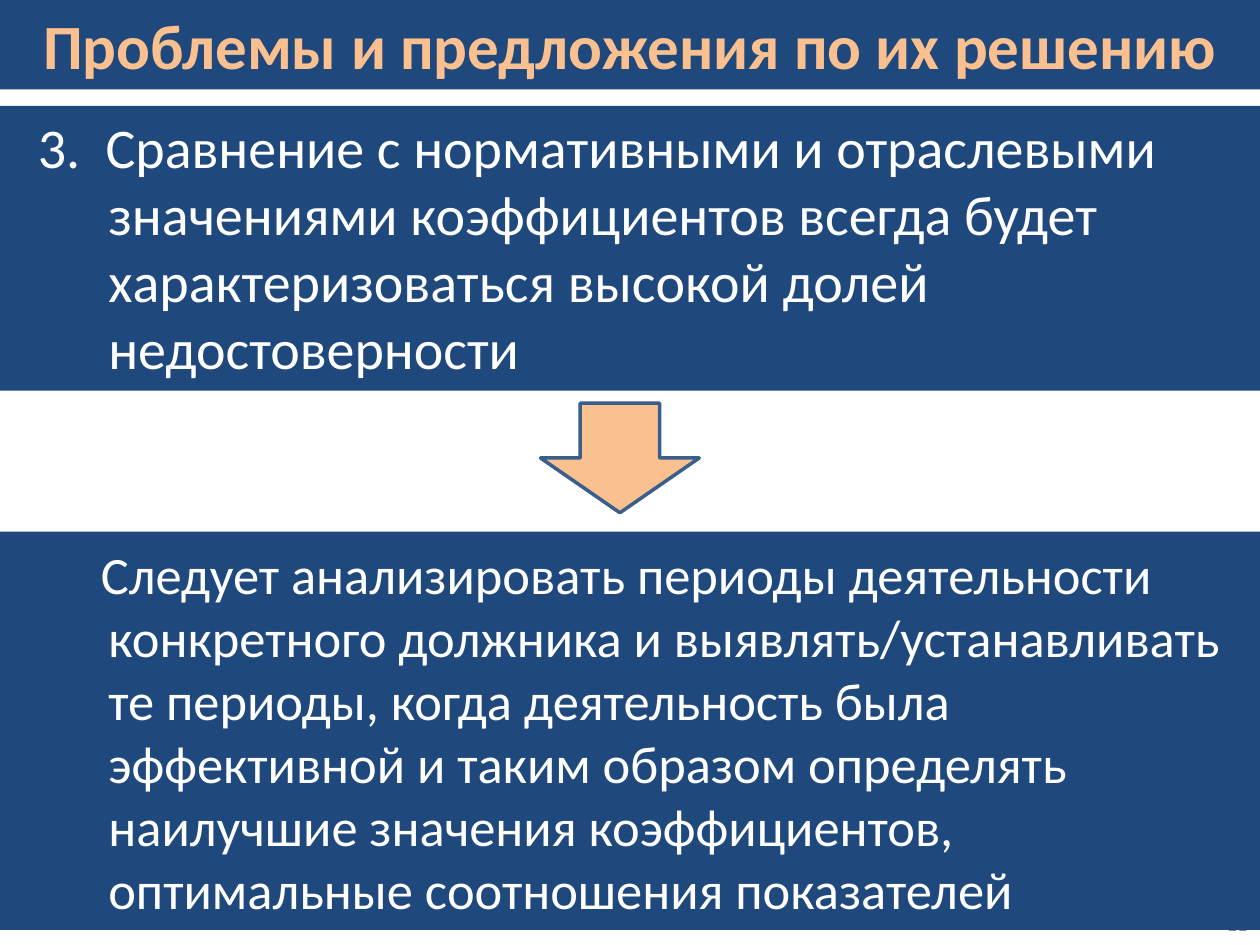
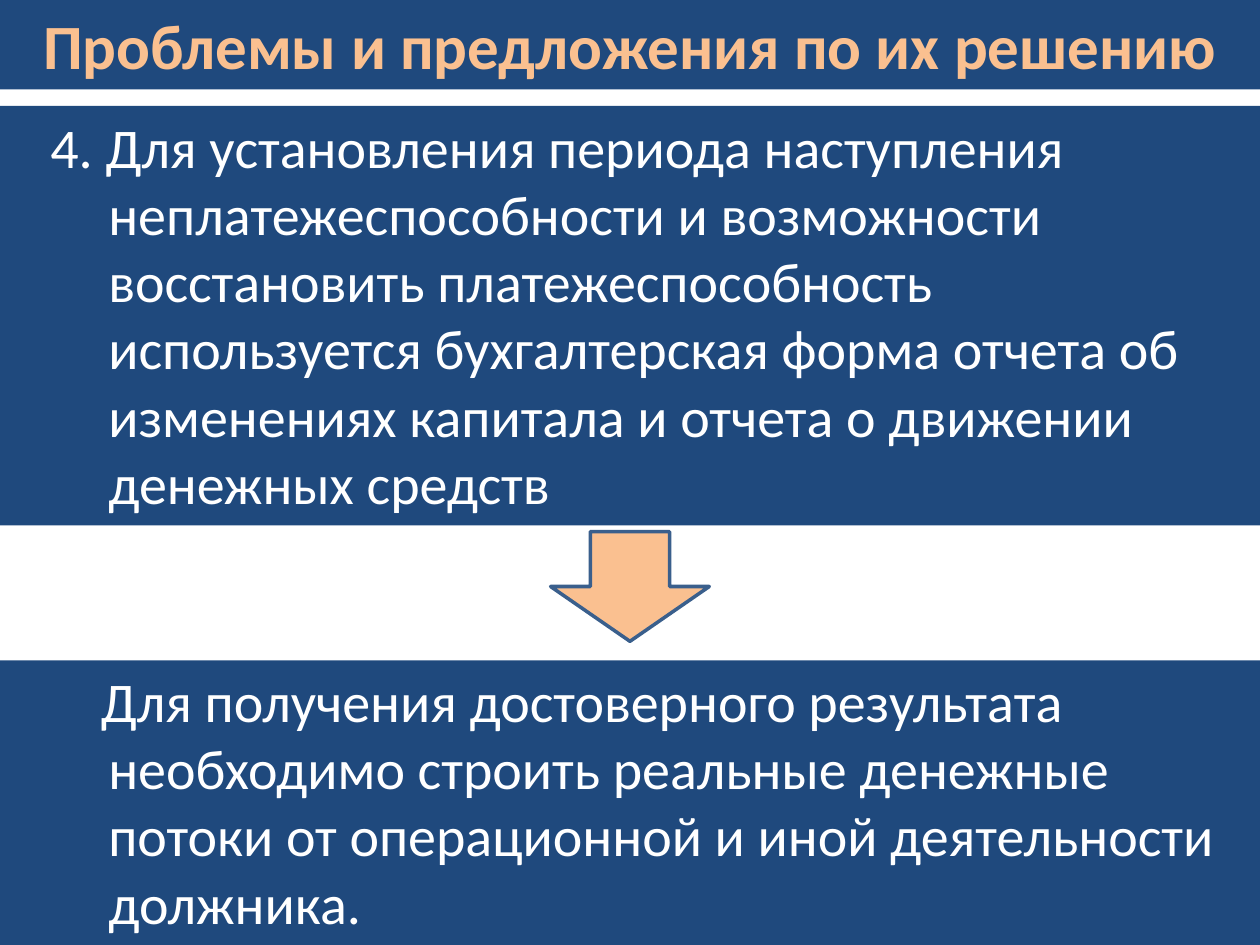
from dataclasses import dataclass

from pptx import Presentation
from pptx.dml.color import RGBColor
from pptx.enum.shapes import MSO_SHAPE
from pptx.enum.text import MSO_ANCHOR, MSO_AUTO_SIZE, PP_ALIGN
from pptx.oxml.xmlchemy import OxmlElement
from pptx.util import Inches, Pt

DOWN_ARROW = MSO_SHAPE.DOWN_ARROW
LEFT, CENTER, RIGHT = PP_ALIGN.LEFT, PP_ALIGN.CENTER, PP_ALIGN.RIGHT
TOP, MIDDLE = MSO_ANCHOR.TOP, MSO_ANCHOR.MIDDLE
NO_AUTOFIT = MSO_AUTO_SIZE.NONE
TWO_CONTENT = 3


@dataclass(frozen=True)
class Theme:
    font: str = "Calibri"
    navy: RGBColor = RGBColor(0x1F, 0x49, 0x7D)
    peach: RGBColor = RGBColor(0xFA, 0xC0, 0x90)
    outline: RGBColor = RGBColor(0x3A, 0x5F, 0x8C)
    white: RGBColor = RGBColor(0xFF, 0xFF, 0xFF)
    gray: RGBColor = RGBColor(0x8C, 0x8C, 0x8C)
    title_size: int = 36
    body_size: int = 32
    compact_size: int = 30
    number_size: int = 12


theme = Theme()

# Layout in inches
WIDTH, HEIGHT = 10, 7.5
TITLE_HEIGHT = 0.71
PROBLEM_TOP = 0.84
ARROW_WIDTH, ARROW_HEIGHT = 1.26, 0.87
HANGING_MARGIN = 0.76
SOLUTION_INDENT = -0.06

TITLE = "Проблемы и предложения по их решению"

# Each band: text, height, first-line indent, size, top inset
slides = [
    {
        "problem": ("3.  Сравнение с нормативными и отраслевыми значениями "
                    "коэффициентов всегда будет характеризоваться высокой "
                    "долей недостоверности", 2.26, -0.56, theme.body_size, 0.05),
        "solution": ("Следует анализировать периоды деятельности конкретного "
                     "должника и выявлять/устанавливать те периоды, когда "
                     "деятельность была эффективной и таким образом определять "
                     "наилучшие значения коэффициентов, оптимальные соотношения "
                     "показателей", 3.16, SOLUTION_INDENT, theme.compact_size, 0.08),
        "solution_top": 4.22,
        "arrow": (4.29, 3.2),
        "number": "11",
    },
    {
        "problem": ("4. Для установления периода наступления "
                    "неплатежеспособности и возможности восстановить "
                    "платежеспособность используется бухгалтерская форма отчета "
                    "об изменениях капитала и отчета о движении денежных средств",
                    3.33, -0.46, theme.body_size, 0.05),
        "solution": ("Для получения достоверного результата необходимо строить "
                     "реальные денежные потоки от операционной и иной "
                     "деятельности должника.", 2.26, SOLUTION_INDENT,
                     theme.body_size, 0.05),
        "solution_top": 5.24,
        "arrow": ((WIDTH - ARROW_WIDTH) / 2, 4.22),
        "number": None,
    },
]


def write(shape, text, size, color, bold=False, align=LEFT, anchor=TOP,
          margin=0, indent=0, top_inset=0.05):
    """Put one formatted paragraph without a bullet into a shape."""
    frame = shape.text_frame
    frame.text = text
    frame.word_wrap = True
    frame.auto_size = NO_AUTOFIT
    frame.vertical_anchor = anchor
    frame.margin_top = Inches(top_inset)
    paragraph = frame.paragraphs[0]
    paragraph.alignment = align
    paragraph.line_spacing = 1.0
    paragraph.space_before = Pt(0)
    properties = paragraph._p.get_or_add_pPr()
    properties.set("marL", str(Inches(margin)))
    properties.set("indent", str(Inches(indent)))
    properties.append(OxmlElement("a:buNone"))
    font = paragraph.runs[0].font
    font.name, font.size, font.bold = theme.font, Pt(size), bold
    font.color.rgb = color


def place_band(shape, top, height):
    """Stretch a placeholder across the slide as a navy band."""
    shape.left, shape.top = Inches(0), Inches(top)
    shape.width, shape.height = Inches(WIDTH), Inches(height)
    shape.fill.solid()
    shape.fill.fore_color.rgb = theme.navy


presentation = Presentation()
presentation.slide_width = Inches(WIDTH)
presentation.slide_height = Inches(HEIGHT)

for content in slides:
    slide = presentation.slides.add_slide(presentation.slide_layouts[TWO_CONTENT])
    title, problem, solution = slide.placeholders

    # Title band
    place_band(title, 0, TITLE_HEIGHT)
    write(title, TITLE, theme.title_size, theme.peach, bold=True, align=CENTER)

    # Problem and solution bands
    for band, key, top in ((problem, "problem", PROBLEM_TOP),
                           (solution, "solution", content["solution_top"])):
        text, height, indent, size, top_inset = content[key]
        place_band(band, top, height)
        write(band, text, size, theme.white, margin=HANGING_MARGIN,
              indent=indent, top_inset=top_inset)

    # Arrow from problem to solution
    left, top = content["arrow"]
    arrow = slide.shapes.add_shape(DOWN_ARROW, Inches(left), Inches(top),
                                   Inches(ARROW_WIDTH), Inches(ARROW_HEIGHT))
    arrow.shadow.inherit = False
    arrow.fill.solid()
    arrow.fill.fore_color.rgb = theme.peach
    arrow.line.color.rgb = theme.outline
    arrow.line.width = Pt(2)

    # Slide number, behind the bands
    if content["number"]:
        number = slide.shapes.add_textbox(Inches(7.67), Inches(7.13),
                                          Inches(2.33), Inches(0.4))
        write(number, content["number"], theme.number_size, theme.gray,
              align=RIGHT, anchor=MIDDLE)
        slide.shapes._spTree.insert(2, number._element)

presentation.save("out.pptx")
